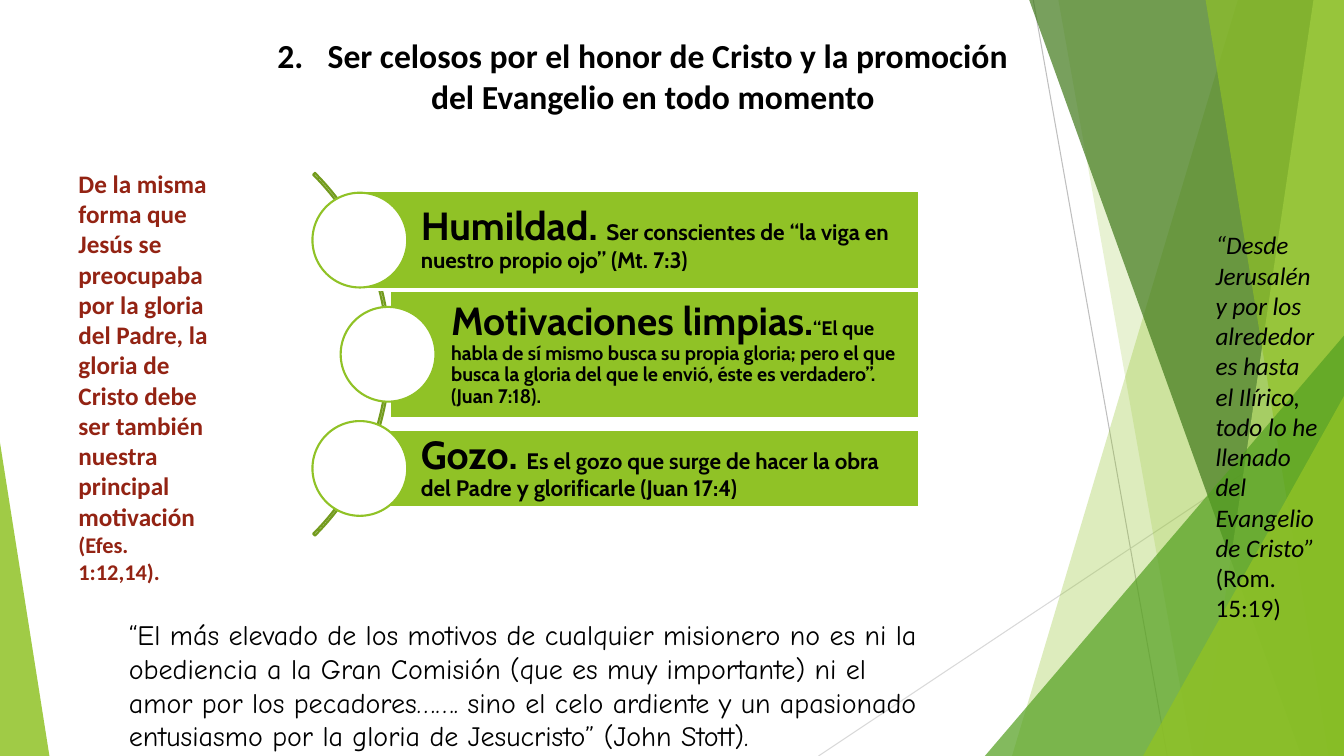
from dataclasses import dataclass

from lxml.etree import SubElement
from pptx import Presentation
from pptx.dml.color import RGBColor
from pptx.enum.shapes import MSO_CONNECTOR, MSO_SHAPE
from pptx.enum.text import MSO_ANCHOR, MSO_AUTO_SIZE, PP_ALIGN
from pptx.oxml.ns import qn
from pptx.util import Inches, Pt

COLORS = {
    "white": "FFFFFF", "black": "000000", "green": "90C226", "arc": "739B1E",
    "leaf": "54A021", "forest": "3F7819", "lime": "C0E474", "brick": "932313",
    "gray": "BFBFBF", "pale": "D9D9D9",
}
FACETS = [
    (92.1, 75.3, "green", 30),
    (78.75, 88.73, "green", 20),
    (76.58, 96.83, "forest", 70),
    (97.73, 89.4, "lime", 70),
    (89.7, 98.85, "green", 65),
]
CORNERS = [
    ((73.28, 44.4, 26.72, 55.6), 1, "leaf", 72),
    ((85.05, 52.4, 14.95, 47.6), 1, "green", 80),
    ((0, 58.53, 3.68, 41.47), 0, "green", 85),
]
RAYS = [((76.88, 0), (86.85, 100), "gray"), ((100, 53.73), (60.9, 100), "pale")]
MOTIVES = [
    ("Humildad. ", "Ser conscientes de “la viga en nuestro propio ojo” (Mt. 7:3)",
     16, 0, 7.77, 19.25),
    ("Motivaciones limpias.",
     "“El que habla de sí mismo busca su propia gloria; pero el que busca la gloria "
     "del que le envió, éste es verdadero”. (Juan 7:18).",
     14, 4.63, 12.73, 24.75),
    ("Gozo. ", "Es el gozo que surge de hacer la obra del Padre y glorificarle (Juan 17:4)",
     16, 0, 7.77, 14.93),
]


@dataclass
class Box:
    left: int
    top: int
    width: int
    height: int

    def point(self, x, y):
        return int(self.left + self.width * x / 100), int(self.top + self.height * y / 100)

    def area(self, x, y, width, height):
        return Box(*self.point(x, y), int(self.width * width / 100),
                   int(self.height * height / 100))

    def frame(self):
        return self.left, self.top, self.width, self.height


def color(name):
    return RGBColor.from_string(COLORS[name])


def paint(shape, fill=None, line=None, alpha=100):
    shape.shadow.inherit = False
    if fill:
        shape.fill.solid()
        shape.fill.fore_color.rgb = color(fill)
        if alpha < 100:
            tint = shape._element.spPr.find(qn("a:solidFill"))[0]
            SubElement(tint, qn("a:alpha"), val=str(alpha * 1000))
    else:
        shape.fill.background()
    if line:
        shape.line.color.rgb = color(line)
        shape.line.width = Pt(1.5)
    else:
        shape.line.fill.background()


def write(frame, paragraphs, font="Calibri", ink="black", bold=False,
          anchor=MSO_ANCHOR.TOP, aligns=(PP_ALIGN.LEFT,), spacing=1.0):
    frame.word_wrap = True
    frame.auto_size = MSO_AUTO_SIZE.NONE
    frame.vertical_anchor = anchor
    for index, (runs, align) in enumerate(zip(paragraphs, aligns)):
        paragraph = frame.paragraphs[0] if index == 0 else frame.add_paragraph()
        paragraph.alignment = align
        paragraph.line_spacing = spacing
        paragraph.space_before = Pt(0)
        for text, size, italic in runs:
            run = paragraph.add_run()
            run.text = text
            run.font.name = font
            run.font.size = Pt(size)
            run.font.bold = bold
            run.font.italic = italic
            run.font.color.rgb = color(ink)


def draw_facets(slide, box):
    for start, end, tone in RAYS:
        ray = slide.shapes.add_connector(
            MSO_CONNECTOR.STRAIGHT, *box.point(*start), *box.point(*end))
        ray.line.color.rgb = color(tone)
        ray.line.width = Pt(0.75)
        SubElement(ray._element.spPr, qn("a:effectLst"))
    for top_x, bottom_x, tone, alpha in FACETS:
        outline = slide.shapes.build_freeform(*box.point(top_x, 0))
        outline.add_line_segments(
            [box.point(100, 0), box.point(100, 100), box.point(bottom_x, 100)], close=True)
        paint(outline.convert_to_shape(), tone, alpha=alpha)
    for place, apex, tone, alpha in CORNERS:
        corner = slide.shapes.add_shape(
            MSO_SHAPE.ISOSCELES_TRIANGLE, *box.area(*place).frame())
        corner.adjustments[0] = apex
        paint(corner, tone, alpha=alpha)


def place_title(slide, box):
    title = slide.shapes.title
    title.left, title.top, title.width, title.height = box.frame()
    write(title.text_frame,
          [[("Ser celosos por el honor de Cristo y la promoción", 24, False)],
           [(" del Evangelio en todo momento ", 24, False)]],
          bold=True, aligns=(PP_ALIGN.LEFT, PP_ALIGN.CENTER))
    numbered = title.text_frame.paragraphs[0]._p.get_or_add_pPr()
    numbered.set("marL", str(Inches(0.5)))
    numbered.set("indent", str(-Inches(0.5)))
    SubElement(numbered, qn("a:buFont"), typeface="+mj-lt")
    SubElement(numbered, qn("a:buAutoNum"), type="arabicPeriod", startAt="2")


def draw_motives(slide, box):
    arc = slide.shapes.add_shape(
        MSO_SHAPE.BLOCK_ARC, *box.area(-71.4, 0, 84.13, 100).frame())
    for index, value in enumerate((189, 27, 0.005)):
        arc.adjustments[index] = value
    paint(arc, line="arc")
    circle_width, circle_height = 15.54, 18.47
    for index, (name, detail, size, circle_x, band_x, band_height) in enumerate(MOTIVES):
        middle = 50 + 22.25 * (index - 1)
        band = slide.shapes.add_shape(MSO_SHAPE.RECTANGLE, *box.area(
            band_x, middle - band_height / 2, 99.5 - band_x, band_height).frame())
        paint(band, "green", "white")
        frame = band.text_frame
        frame.margin_left = int(box.width * 0.1)
        frame.margin_right = frame.margin_top = frame.margin_bottom = int(box.width * 0.01)
        write(frame, [[(name, 28, False), (detail, size, False)]], font="Cabin",
              bold=True, anchor=MSO_ANCHOR.MIDDLE, spacing=0.9)
        circle = slide.shapes.add_shape(MSO_SHAPE.OVAL, *box.area(
            circle_x, middle - circle_height / 2, circle_width, circle_height).frame())
        paint(circle, "white", "green")


def place_passage(slide, box, runs, **style):
    passage = slide.shapes.add_textbox(*box.frame())
    write(passage.text_frame, [runs], **style)


def main():
    deck = Presentation()
    deck.slide_width, deck.slide_height = Inches(13.33), Inches(7.5)
    slide = deck.slides.add_slide(deck.slide_layouts[5])
    page = Box(0, 0, deck.slide_width, deck.slide_height)
    draw_facets(slide, page)
    place_title(slide, page.area(19.88, 4, 57.38, 12.13))
    place_passage(slide, page.area(89.7, 29.73, 9.3, 53.87), [
        ("“Desde Jerusalén y por los alrededores hasta el Ilírico, todo lo he llenado "
         "del Evangelio de Cristo” ", 18, True),
        ("(Rom. 15:19)", 18, False)])
    draw_motives(slide, page.area(23.25, 12.93, 45.38, 67.87))
    place_passage(slide, page.area(5.1, 21.6, 11.4, 56.93), [
        ("De la misma forma que Jesús se preocupaba por la gloria del Padre, la gloria "
         "de Cristo debe ser también nuestra principal motivación ", 18, False),
        ("(Efes. 1:12,14).", 16, False)], ink="brick", bold=True)
    place_passage(slide, page.area(8.85, 81.07, 61.43, 14.8), [
        ("“El más elevado de los motivos de cualquier misionero no es ni la obediencia a "
         "la Gran Comisión (que es muy importante) ni el amor por los pecadores……. sino "
         "el celo ardiente y un apasionado entusiasmo por la gloria de Jesucristo” "
         "(John Stott).", 20, False)], font="Comic Neue")
    deck.save("out.pptx")


if __name__ == "__main__":
    main()
